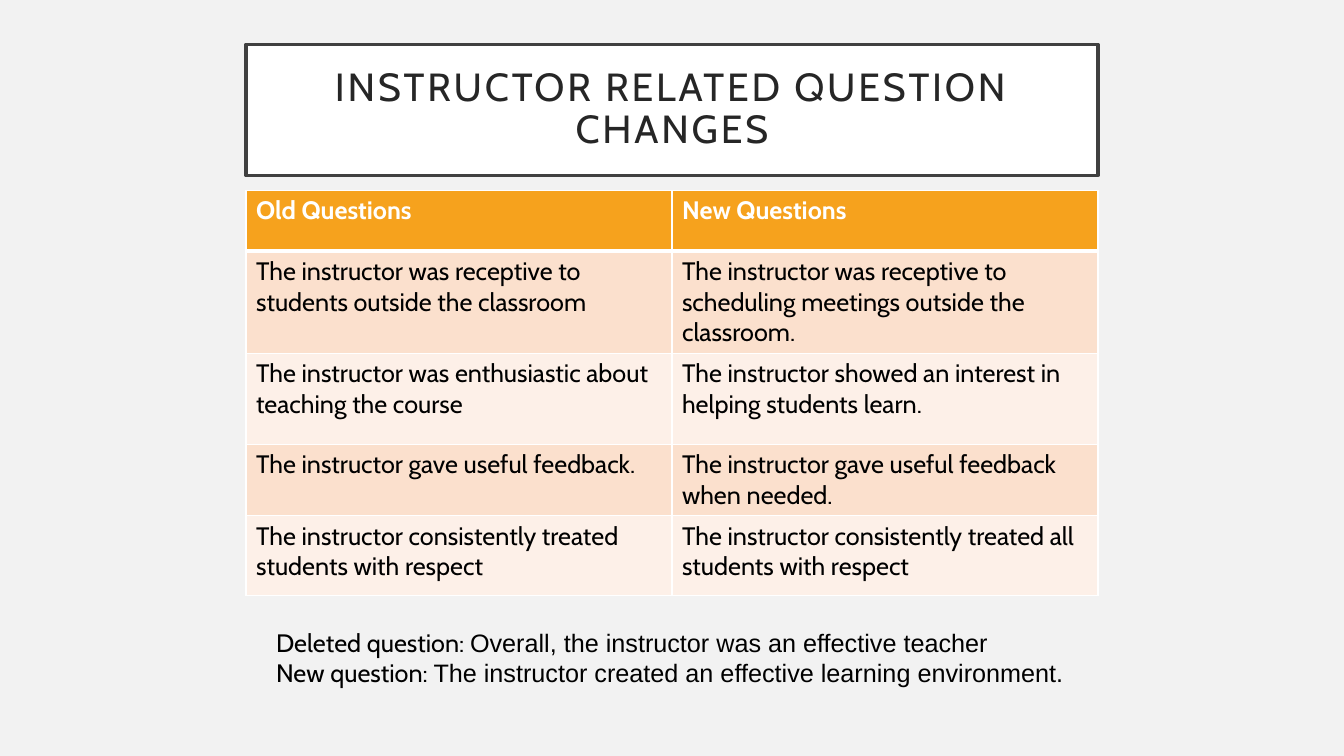
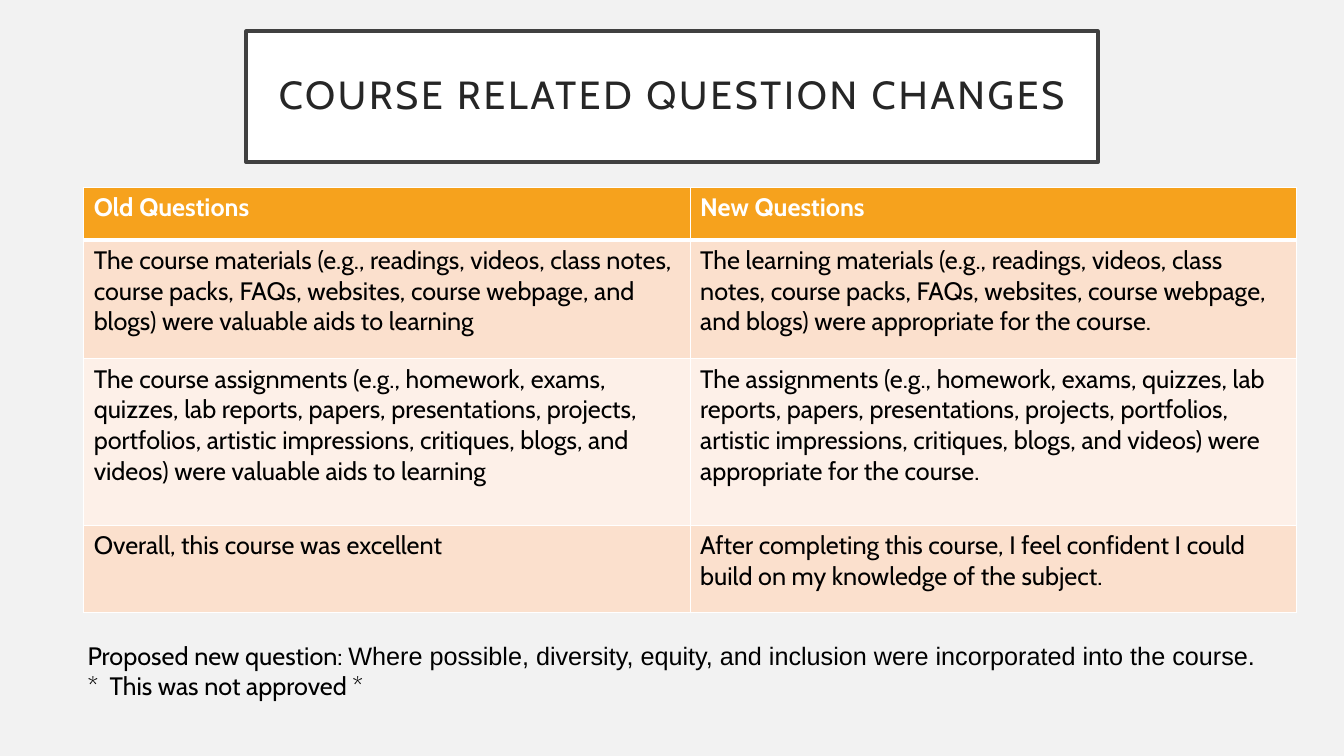
from lxml import etree
from pptx import Presentation
from pptx.dml.color import RGBColor
from pptx.enum import text
from pptx.oxml import ns
from pptx.util import Inches, Pt

FONT, NOTE_FONT = "Cabin", "Arial"
PAGE, WHITE, BLACK = "F2F2F2", "FFFFFF", "000000"
TITLE_INK, TITLE_LINE = "262626", "404040"
HEADER, BANDS = "F6A21D", ("FDF0E8", "FBE0CD")
HEADINGS = ("Old Questions", "New Questions")
TITLE_LEFT, TITLE_WIDTH, TITLE_HEIGHT = 2.44, 8.45, 1.3


def rgb(value):
    """Turn a hex string into a colour."""
    return RGBColor.from_string(value)


def paint(fill, color):
    """Give a fill one solid colour."""
    fill.solid()
    fill.fore_color.rgb = rgb(color)


def style(font, color, size=18, name=FONT, bold=False):
    """Set the look of a font."""
    font.name, font.size, font.bold = name, Pt(size), bold
    font.color.rgb = rgb(color)


def add_title(s, title, top):
    """Place the framed title at the given height."""
    sp = s.shapes.title
    sp.left, sp.top = Inches(TITLE_LEFT), Inches(top)
    sp.width, sp.height = Inches(TITLE_WIDTH), Inches(TITLE_HEIGHT)
    paint(sp.fill, WHITE)
    sp.line.color.rgb = rgb(TITLE_LINE)
    sp.line.width = Pt(2.5)
    tf = sp.text_frame
    tf.auto_size = text.MSO_AUTO_SIZE.NONE
    tf.word_wrap = True
    tf.vertical_anchor = text.MSO_ANCHOR.MIDDLE
    tf.margin_left = tf.margin_right = Inches(0.2)
    tf.margin_top = tf.margin_bottom = Inches(0.2)
    p = tf.paragraphs[0]
    p.alignment, p.line_spacing = text.PP_ALIGN.CENTER, 0.9
    style(p.font, TITLE_INK, 28)
    r = p.add_run()
    r.text = title
    r.font._element.set("spc", "200")


def add_borders(cell, top, bottom):
    """Draw white cell borders with the given top and bottom widths."""
    tc_pr = cell._tc.get_or_add_tcPr()
    widths = {"lnL": 1, "lnR": 1, "lnT": top, "lnB": bottom}
    for i, (side, width) in enumerate(widths.items()):
        ln = etree.Element(ns.qn("a:" + side), w=str(Pt(width)))
        solid = etree.SubElement(ln, ns.qn("a:solidFill"))
        etree.SubElement(solid, ns.qn("a:srgbClr"), val=WHITE)
        tc_pr.insert(i, ln)


def add_questions(s, left, top, width, heights, questions):
    """Place the two-column table of old and new questions."""
    rows = [HEADINGS, *questions]
    frame = s.shapes.add_table(len(rows), 2, Inches(left), Inches(top),
                               Inches(width), Inches(sum(heights)))
    table = frame.table
    for column in table.columns:
        column.width = Inches(width / 2)
    for i, (height, row) in enumerate(zip(heights, rows)):
        table.rows[i].height = Inches(height)
        for j, question in enumerate(row):
            cell = table.cell(i, j)
            cell.text = question
            style(cell.text_frame.paragraphs[0].font,
                  BLACK if i else WHITE, bold=i == 0)
            paint(cell.fill, BANDS[i % 2] if i else HEADER)
            add_borders(cell, 3 if i == 1 else 1, 1 if i else 3)


def add_notes(s, left, top, width, height, lines):
    """Place the closing lines, each a label and a question."""
    tf = s.shapes.add_textbox(Inches(left), Inches(top), Inches(width),
                              Inches(height)).text_frame
    tf.word_wrap = True
    for i, line in enumerate(lines):
        p = tf.add_paragraph() if i else tf.paragraphs[0]
        for words, name in zip(line, (FONT, NOTE_FONT)):
            r = p.add_run()
            r.text = words
            style(r.font, BLACK, name=name)


def add_slide(prs, title, title_top, table, notes):
    """Build one slide of question changes."""
    s = prs.slides.add_slide(prs.slide_layouts[5])
    add_title(s, title, title_top)
    add_questions(s, *table)
    add_notes(s, *notes)


def main():
    """Build and save the presentation."""
    prs = Presentation()
    prs.slide_width, prs.slide_height = Inches(13.33), Inches(7.5)
    paint(prs.slide_master.background.fill, PAGE)
    add_slide(
        prs, "INSTRUCTOR RELATED QUESTION CHANGES", 0.44,
        (2.44, 1.89, 8.45, (0.6, 1.01, 0.9, 0.71, 0.79), [
            ("The instructor was receptive to students outside the classroom",
             "The instructor was receptive to scheduling meetings outside "
             "the classroom."),
            ("The instructor was enthusiastic about teaching the course",
             "The instructor showed an interest in helping students learn."),
            ("The instructor gave useful feedback.",
             "The instructor gave useful feedback when needed."),
            ("The instructor consistently treated students with respect",
             "The instructor consistently treated all students with respect"),
        ]),
        (2.64, 6.17, 8.2, 1.01, [
            ("Deleted question: ",
             "Overall, the instructor was an effective teacher"),
            ("New question: ",
             "The instructor created an effective learning environment."),
        ]))
    add_slide(
        prs, "COURSE RELATED QUESTION CHANGES", 0.31,
        (0.83, 1.86, 12.03, (0.52, 1.18, 1.65, 0.87), [
            ("The course materials (e.g., readings, videos, class notes, "
             "course packs, FAQs, websites, course webpage, and blogs) were "
             "valuable aids to learning",
             "The learning materials (e.g., readings, videos, class notes, "
             "course packs, FAQs, websites, course webpage, and blogs) were "
             "appropriate for the course."),
            ("The course assignments (e.g., homework, exams, quizzes, lab "
             "reports, papers, presentations, projects, portfolios, artistic "
             "impressions, critiques, blogs, and videos) were valuable aids "
             "to learning",
             "The assignments (e.g., homework, exams, quizzes, lab reports, "
             "papers, presentations, projects, portfolios, artistic "
             "impressions, critiques, blogs, and videos) were appropriate "
             "for the course."),
            ("Overall, this course was excellent",
             "After completing this course, I feel confident I could build "
             "on my knowledge of the subject."),
        ]),
        (0.77, 6.3, 12, 0.71, [
            ("Proposed new question: ",
             "Where possible, diversity, equity, and inclusion were "
             "incorporated into the course."),
            ("*  This was not approved *",),
        ]))
    prs.save("out.pptx")


if __name__ == "__main__":
    main()
